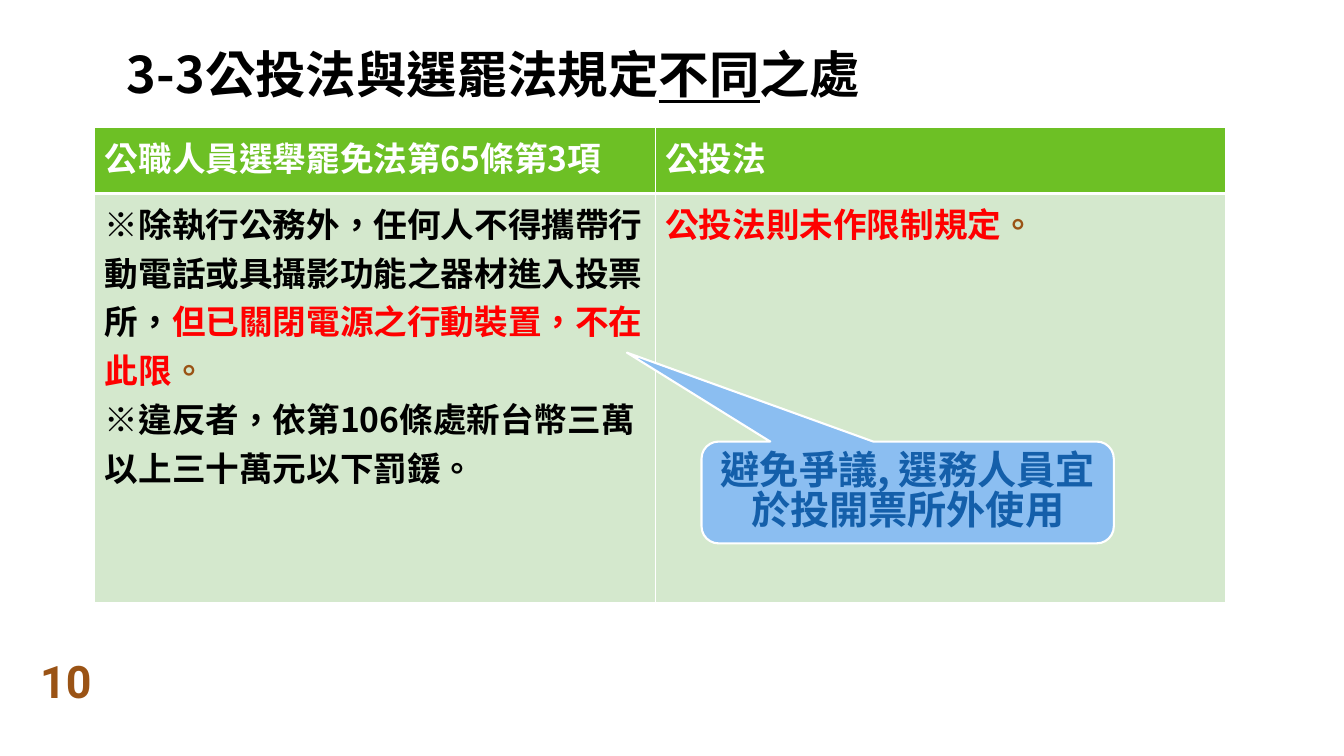
from lxml import etree
from pptx import Presentation
from pptx.dml.color import RGBColor
from pptx.enum import lang, shapes, text
from pptx.oxml import ns
from pptx.util import Pt

BLACK = RGBColor(0x00, 0x00, 0x00)
WHITE = RGBColor(0xFF, 0xFF, 0xFF)
RED = RGBColor(0xFF, 0x00, 0x00)
BROWN = RGBColor(0x9A, 0x53, 0x15)
HEADER_GREEN = RGBColor(0x6D, 0xC0, 0x25)
BODY_GREEN = RGBColor(0xD4, 0xE8, 0xCD)
CALLOUT_BLUE = RGBColor(0x8B, 0xBE, 0xF1)
TEXT_BLUE = RGBColor(0x14, 0x5F, 0xAA)
SANS_SC = "Noto Sans CJK SC"
SANS_TC = "Noto Sans CJK TC"


def write(frame, paragraphs, size=24, color=BLACK, name=SANS_SC,
          align=text.PP_ALIGN.LEFT, spacing=1.0, anchor=None):
    """Fill a text frame; each paragraph is a list of (text, format changes)."""
    frame.word_wrap = True
    if anchor is not None:
        frame.vertical_anchor = anchor
    for index, runs in enumerate(paragraphs):
        paragraph = frame.add_paragraph() if index else frame.paragraphs[0]
        paragraph.alignment = align
        paragraph.line_spacing = spacing
        for words, changes in runs:
            run = paragraph.add_run()
            run.text = words
            font = run.font
            font.size = Pt(size)
            font.bold = True
            font.underline = changes.get("underline")
            font.color.rgb = changes.get("color", color)
            font.name = changes.get("name", name)
            font.language_id = lang.MSO_LANGUAGE_ID.TRADITIONAL_CHINESE
            east_asian = etree.SubElement(run._r.get_or_add_rPr(), ns.qn("a:ea"))
            east_asian.set("typeface", font.name)


def add_borders(cell, widths):
    """Draw white borders; widths maps L, R, T and B to points."""
    properties = cell._tc.get_or_add_tcPr()
    for index, (side, width) in enumerate(widths.items()):
        line = etree.Element(ns.qn(f"a:ln{side}"), w=str(Pt(width)))
        fill = etree.SubElement(line, ns.qn("a:solidFill"))
        etree.SubElement(fill, ns.qn("a:srgbClr"), val=str(WHITE))
        properties.insert(index, line)


presentation = Presentation()
presentation.slide_width = Pt(960)
presentation.slide_height = Pt(540)
slide = presentation.slides.add_slide(presentation.slide_layouts[5])

# Title
title = slide.shapes.title
title.left, title.top, title.width, title.height = Pt(83.5), Pt(25.9), Pt(792), Pt(52.6)
title.text_frame.auto_size = text.MSO_AUTO_SIZE.NONE
write(title.text_frame,
      [[("3-3公投法與選罷法規定", {}), ("不同", {"underline": True}), ("之處", {})]],
      size=36, spacing=0.9, anchor=text.MSO_ANCHOR.BOTTOM)

# Comparison table
table = slide.shapes.add_table(2, 2, Pt(67.7), Pt(90.7), Pt(807.8), Pt(339.8)).table
for column, width in zip(table.columns, (400.3, 407.5)):
    column.width = Pt(width)
for row, height in zip(table.rows, (47.5, 292.3)):
    row.height = Pt(height)

election_rule = [
    [("※", {"name": SANS_TC}),
     ("除執行公務外，任何人不得攜帶行動電話或具攝影功能之器材進入投票所", {}),
     ("，", {"name": SANS_TC}),
     ("但已關閉電源之行動裝置", {"color": RED}),
     ("，", {"color": RED, "name": SANS_TC}),
     ("不在此限", {"color": RED}),
     ("。", {"color": BROWN})],
    [("※違反者，依第106條處新台幣三萬以上三十萬元以下罰鍰。", {})],
]
referendum_rule = [[("公投法則未作限制規定", {"color": RED}), ("。", {"color": BROWN})]]
rows = [
    ([[[("公職人員選舉罷免法第65條第3項", {})]], [[("公投法", {})]]],
     HEADER_GREEN, WHITE, {"L": 1, "R": 1, "T": 1, "B": 3}),
    ([election_rule, referendum_rule],
     BODY_GREEN, BLACK, {"L": 1, "R": 1, "T": 3, "B": 1}),
]
for row_index, (contents, fill_color, text_color, widths) in enumerate(rows):
    for column_index, paragraphs in enumerate(contents):
        cell = table.cell(row_index, column_index)
        cell.fill.solid()
        cell.fill.fore_color.rgb = fill_color
        add_borders(cell, widths)
        write(cell.text_frame, paragraphs, color=text_color)

# Page number
number = slide.shapes.add_textbox(Pt(21.6), Pt(477.4), Pt(67.7), Pt(18))
write(number.text_frame, [[("10", {})]], size=32, color=BROWN, name="Roboto",
      anchor=text.MSO_ANCHOR.MIDDLE)

# Callout
callout = slide.shapes.add_shape(shapes.MSO_SHAPE.ROUNDED_RECTANGULAR_CALLOUT,
                                 Pt(501.1), Pt(315.4), Pt(294.5), Pt(72.7))
for index, value in enumerate((-0.681, -1.374, 0.167)):
    callout.adjustments[index] = value
callout.shadow.inherit = False
callout.fill.solid()
callout.fill.fore_color.rgb = CALLOUT_BLUE
callout.line.color.rgb = WHITE
callout.line.width = Pt(1.5)
write(callout.text_frame, [[("避免爭議, 選務人員宜於投開票所外使用", {})]], size=28,
      color=TEXT_BLUE, align=text.PP_ALIGN.CENTER, spacing=0.85,
      anchor=text.MSO_ANCHOR.MIDDLE)

presentation.save("out.pptx")
